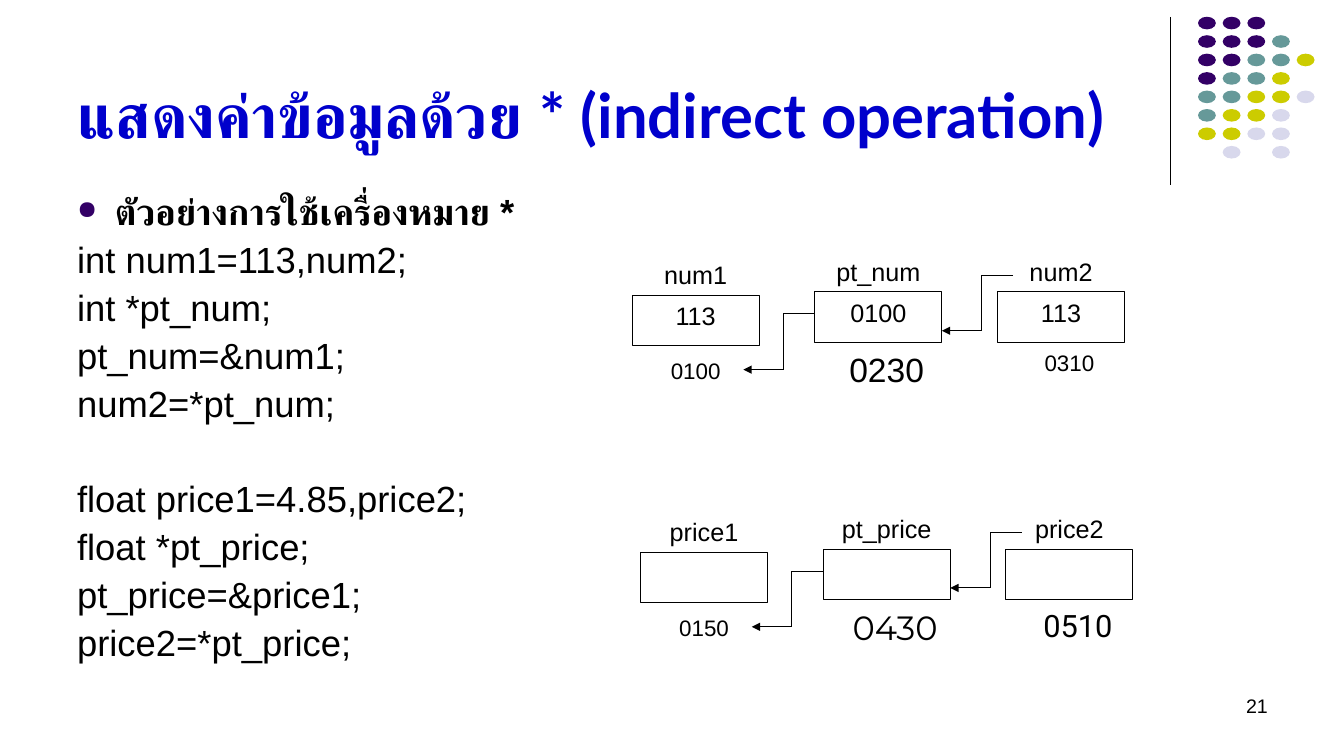
from dataclasses import dataclass

from lxml import etree
from pptx import Presentation
from pptx import util as u
from pptx.dml.color import RGBColor
from pptx.enum import shapes, text
from pptx.oxml.ns import qn


@dataclass(frozen=True)
class Theme:
    ink: str = "000000"
    title: str = "0000CC"
    purple: str = "330066"
    teal: str = "669999"
    lime: str = "CCCC00"
    pale: str = "D8D8EC"
    font: str = "Arial"
    title_font: str = "Lato"
    title_size: int = 44
    code_size: int = 26
    label_size: int = 18
    address_size: int = 16
    number_size: int = 14
    line: float = 0.75


THEME = Theme()
PX = 9525  # 96 px to the inch
DOT_ROWS = ["PPP", "PPPT", "PPTTL", "PTTL", "TTLLV", "TLLV", "LLVV", " V V"]
DOT_COLOURS = {"P": THEME.purple, "T": THEME.teal, "L": THEME.lime, "V": THEME.pale}
HEADING = "ตัวอย่างการใช้เครื่องหมาย *"
CODE_BLOCKS = [
    ["int num1=113,num2;", "int *pt_num;", "pt_num=&num1;", "num2=*pt_num;"],
    ["float price1=4.85,price2;", "float *pt_price;", "pt_price=&price1;",
     "price2=*pt_price;"],
]
# Each variable: name, value, address, address size, address font
NUM_CELLS = [
    ("num1", "113", "0100", THEME.address_size, THEME.font),
    ("pt_num", "0100", "0230", 24, THEME.font),
    ("num2", "113", "0310", THEME.address_size, THEME.font),
]
PRICE_CELLS = [
    ("price1", "", "0150", THEME.address_size, THEME.font),
    ("pt_price", "", "0430", 24, "Montserrat"),
    ("price2", "", "0510", 22, "Roboto"),
]


def px(*values):
    return [u.Emu(round(v * PX)) for v in values]


def write(p, words, size, **fmt):
    r = p.add_run()
    r.text = words
    values = {"size": u.Pt(size), "name": THEME.font, "bold": False}
    colour = fmt.pop("colour", THEME.ink)
    for name, value in {**values, **fmt}.items():
        setattr(r.font, name, value)
    r.font.color.rgb = RGBColor.from_string(colour)


def add_text(slide, box, words, size, align=text.PP_ALIGN.CENTER, **fmt):
    tf = slide.shapes.add_textbox(*px(*box)).text_frame
    tf.word_wrap = True
    tf.paragraphs[0].alignment = align
    write(tf.paragraphs[0], words, size, **fmt)


def add_line(slide, start, end, arrow=False):
    line = slide.shapes.add_connector(
        shapes.MSO_CONNECTOR.STRAIGHT, *px(*start, *end))
    line.line.color.rgb = RGBColor.from_string(THEME.ink)
    line.line.width = u.Pt(THEME.line)
    if arrow:
        etree.SubElement(line.line._get_or_add_ln(), qn("a:tailEnd"), type="triangle")
    etree.SubElement(line._element.spPr, qn("a:effectLst"))


def add_dots(slide, box):
    """Dot ornament with a vertical rule on its left."""
    x, y, w, h = box
    dot_w, dot_h = 17, 12
    step_x, step_y = (w - dot_w) / 4, (h - dot_h) / (len(DOT_ROWS) - 1)
    add_line(slide, (x - 26, y), (x - 26, y + 160))
    for row, keys in enumerate(DOT_ROWS):
        for col, key in enumerate(keys):
            if key == " ":
                continue
            sp = slide.shapes.add_shape(
                shapes.MSO_SHAPE.OVAL,
                *px(x + col * step_x, y + row * step_y, dot_w, dot_h))
            sp.shadow.inherit = False
            sp.fill.solid()
            sp.fill.fore_color.rgb = RGBColor.from_string(DOT_COLOURS[key])
            sp.line.fill.background()


def add_title(slide, box, words):
    sp = slide.shapes.title
    for name, value in zip(("left", "top", "width", "height"), px(*box)):
        setattr(sp, name, value)
    tf = sp.text_frame
    frame = {"word_wrap": True, "auto_size": text.MSO_AUTO_SIZE.NONE,
             "vertical_anchor": text.MSO_ANCHOR.BOTTOM}
    for name, value in frame.items():
        setattr(tf, name, value)
    p = tf.paragraphs[0]
    p.alignment = text.PP_ALIGN.LEFT
    write(p, words, THEME.title_size, name=THEME.title_font, bold=True,
          colour=THEME.title)


def add_bullet(p):
    pPr = p._p.get_or_add_pPr()
    pPr.set("marL", str(36 * PX))
    pPr.set("indent", str(-36 * PX))
    colour = etree.SubElement(pPr, qn("a:buClr"))
    etree.SubElement(colour, qn("a:srgbClr"), val=THEME.purple)
    etree.SubElement(pPr, qn("a:buSzPct"), val="70000")
    etree.SubElement(pPr, qn("a:buChar"), char="●")


def add_code(slide, box):
    """Bulleted heading, then the code blocks with a line's gap between them."""
    tf = slide.shapes.add_textbox(*px(*box)).text_frame
    tf.word_wrap = True
    gap, block_gap = 6.3, 39.5
    lines = [(HEADING, gap, True)]
    for i, block in enumerate(CODE_BLOCKS):
        for j, code in enumerate(block):
            lines.append((code, block_gap if i and not j else gap, False))
    for i, (words, before, heading) in enumerate(lines):
        p = tf.add_paragraph() if i else tf.paragraphs[0]
        p.line_spacing = 0.9
        p.space_before = u.Pt(before)
        if heading:
            add_bullet(p)
        write(p, words, THEME.code_size, bold=heading)


def add_elbow(slide, x, y):
    """Pointer arrow that runs left, down and left again from (x, y)."""
    bend, reach, drop = 30, 68, 53
    points = [(x, y), (x - bend, y), (x - bend, y + drop), (x - reach, y + drop)]
    for i, (start, end) in enumerate(zip(points, points[1:])):
        add_line(slide, start, end, arrow=i == 2)


def add_memory(slide, box, cells):
    """Row of memory cells: name above, value inside, address below."""
    x, y, w, _ = box
    cell_w, cell_h = 121, 48
    step = (w - cell_w) / (len(cells) - 1)
    for i, (name, value, address, size, font) in enumerate(cells):
        left = x + i * step
        top, shift, address_top = (y, 8, 89) if i else (y + 3, 0, 93)
        sp = slide.shapes.add_shape(
            shapes.MSO_SHAPE.RECTANGLE, *px(left, top + 39, cell_w, cell_h))
        sp.shadow.inherit = False
        sp.fill.background()
        sp.line.color.rgb = RGBColor.from_string(THEME.ink)
        sp.line.width = u.Pt(THEME.line)
        if value:
            sp.text_frame.vertical_anchor = text.MSO_ANCHOR.TOP
            sp.text_frame.paragraphs[0].alignment = text.PP_ALIGN.CENTER
            write(sp.text_frame.paragraphs[0], value, THEME.label_size)
        add_text(slide, (left, top, cell_w, cell_h), name, THEME.label_size)
        add_text(slide, (left + shift, top + address_top, cell_w, cell_h),
                 address, size, name=font)
    add_elbow(slide, x + step, y + 60)
    add_elbow(slide, x + 2 * step + 15, y + 23)


def main():
    prs = Presentation()
    prs.slide_width, prs.slide_height = px(1280, 720)
    slide = prs.slides.add_slide(prs.slide_layouts[5])
    add_dots(slide, (1141, 16, 111, 135))
    add_title(slide, (64, 12, 1050, 136), "แสดงค่าข้อมูลด้วย * (indirect operation)")
    add_code(slide, (64, 180, 520, 463))
    add_memory(slide, (602, 239, 469, 137), NUM_CELLS)
    add_memory(slide, (610, 484, 469, 137), PRICE_CELLS)
    add_text(slide, (918, 656, 299, 48), "21", THEME.number_size,
             align=text.PP_ALIGN.RIGHT)
    prs.save("out.pptx")


if __name__ == "__main__":
    main()
